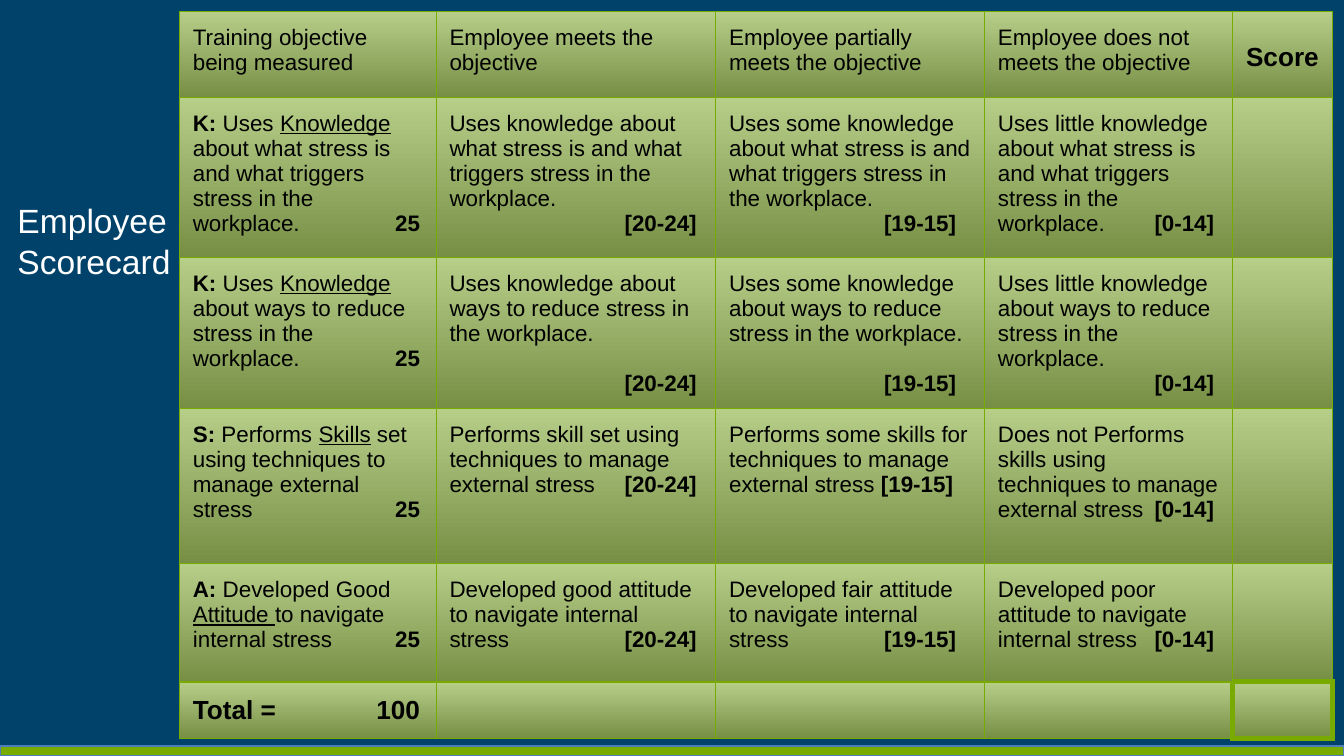
from dataclasses import dataclass

from lxml.etree import SubElement
from pptx import Presentation
from pptx.dml.color import RGBColor
from pptx.enum.shapes import MSO_SHAPE
from pptx.enum.text import MSO_ANCHOR, MSO_AUTO_SIZE, PP_ALIGN
from pptx.oxml import parse_xml
from pptx.oxml.ns import nsdecls, qn
from pptx.util import Inches, Pt


@dataclass(frozen=True)
class Theme:
    font: str = "Arial"
    background: str = "01426A"
    accent: str = "78AA00"
    bar_line: str = "4A7DBA"
    cell_top: str = "B7CE88"
    cell_bottom: str = "768F45"
    light: str = "FFFFFF"
    dark: str = "000000"
    title_size: float = 18
    body_size: float = 12
    strong_size: float = 14
    thin: float = 0.75
    thick: float = 3


BOLD, UNDERLINE = "bold", "underline"
COLUMNS = [19.1, 20.8, 20, 18.45, 7.45]
ROWS = [6.4, 11.9, 11.25, 11.55, 8.8, 4.2]
SCORE_STOPS = [16.9, 18.4, 16.9, 16.1, 5.5]
FULL, GOOD, FAIR, POOR = ((f"\t{score}", BOLD) for score in ("25", "[20-24]", "[19-15]", "[0-14]"))
STRESS = "about what stress is and what triggers stress in the workplace."
REDUCE = "about ways to reduce stress in the workplace."
HEADINGS = [
    "Training objective being measured",
    "Employee meets the objective",
    "Employee partially meets the objective",
    "Employee does not meets the objective",
]


def knowledge_row(topic):
    return [
        [[("K:", BOLD), " Uses ", ("Knowledge", UNDERLINE), f" {topic}", FULL]],
        [[f"Uses knowledge {topic}"], [GOOD]],
        [[f"Uses some knowledge {topic}"], [FAIR]],
    ]


SCORECARD = [
    [[[heading]] for heading in HEADINGS] + [[[("Score", BOLD)]]],
    knowledge_row(STRESS) + [[[f"Uses little knowledge {STRESS}", POOR]], []],
    knowledge_row(REDUCE) + [[[f"Uses little knowledge {REDUCE}"], [POOR]], []],
    [
        [[("S:", BOLD), " Performs ", ("Skills", UNDERLINE),
          " set using techniques to manage external stress", FULL]],
        [["Performs skill set using techniques to manage external stress", GOOD]],
        [["Performs some skills for techniques to manage external stress ", ("[19-15]", BOLD)]],
        [["Does not Performs skills using techniques to manage external stress", POOR]],
        [],
    ],
    [
        [[("A:", BOLD), " Developed Good ", ("Attitude ", UNDERLINE),
          "to navigate internal stress", FULL]],
        [["Developed good attitude to navigate internal stress", GOOD]],
        [["Developed fair attitude to navigate internal stress", FAIR]],
        [["Developed poor attitude to navigate internal stress", POOR]],
        [],
    ],
    [[[("Total =\t100", BOLD)]], [], [], [], []],
]
GAPS = {(2, 1): 13.4, (2, 2): 13.4}


class ScorecardSlide:
    def __init__(self, presentation, theme):
        self.theme = theme
        self.unit = presentation.slide_width / 100
        self.slide = presentation.slides.add_slide(presentation.slide_layouts[5])
        self.paint(self.slide.background.fill, theme.background)

    def grid(self, *lengths):
        return [round(length * self.unit) for length in lengths]

    def paint(self, fill, color):
        fill.solid()
        fill.fore_color.rgb = RGBColor.from_string(color)

    def run(self, paragraph, text, size, color, style=None):
        run = paragraph.add_run()
        run.text = text
        run.font.name = self.theme.font
        run.font.size = Pt(size)
        run.font.bold = style == BOLD
        run.font.underline = style == UNDERLINE
        run.font.color.rgb = RGBColor.from_string(color)

    def bar(self, *place):
        shape = self.slide.shapes.add_shape(MSO_SHAPE.RECTANGLE, *self.grid(*place))
        shape.shadow.inherit = False
        self.paint(shape.fill, self.theme.accent)
        shape.line.color.rgb = RGBColor.from_string(self.theme.bar_line)
        shape.line.width = Pt(self.theme.thin)

    def title(self, lines, *place):
        shape = self.slide.shapes.title
        shape.left, shape.top, shape.width, shape.height = self.grid(*place)
        frame = shape.text_frame
        frame.auto_size = MSO_AUTO_SIZE.NONE
        frame.vertical_anchor = MSO_ANCHOR.TOP
        for index, line in enumerate(lines):
            paragraph = frame.add_paragraph() if index else frame.paragraphs[0]
            paragraph.alignment = PP_ALIGN.LEFT
            self.run(paragraph, line, self.theme.title_size, self.theme.light)

    def table(self, content, left, top):
        place = self.grid(left, top, sum(COLUMNS), sum(ROWS))
        table = self.slide.shapes.add_table(len(ROWS), len(COLUMNS), *place).table
        table.first_row = table.horz_banding = False
        for column, width in zip(table.columns, self.grid(*COLUMNS)):
            column.width = width
        for row, height in zip(table.rows, self.grid(*ROWS)):
            row.height = height
        for row, cells in enumerate(content):
            for column, paragraphs in enumerate(cells):
                cell = table.cell(row, column)
                self.cell_style(cell, row, column)
                self.cell_text(cell, paragraphs, row, column)

    def cell_style(self, cell, row, column):
        theme = self.theme
        cell.margin_left = cell.margin_right = cell.margin_top = Inches(0.1)
        cell.margin_bottom = Inches(0.06)
        cell.fill.gradient()
        cell.fill.gradient_angle = 270
        for stop, position, color in zip(
            cell.fill.gradient_stops, (0, 1), (theme.cell_top, theme.cell_bottom)
        ):
            stop.position = position
            stop.color.rgb = RGBColor.from_string(color)
        last_row, last_column = len(ROWS) - 1, len(COLUMNS) - 1
        thick_sides = {
            (last_row, last_column): "LRTB",
            (last_row - 1, last_column): "B",
            (last_row, last_column - 1): "R",
        }.get((row, column), "")
        properties = cell._tc.get_or_add_tcPr()
        for index, side in enumerate("LRTB"):
            width = Pt(theme.thick if side in thick_sides else theme.thin)
            properties.insert(index, parse_xml(
                f'<a:ln{side} {nsdecls("a")} w="{width}"><a:solidFill>'
                f'<a:srgbClr val="{theme.accent}"/></a:solidFill></a:ln{side}>'
            ))

    def cell_text(self, cell, paragraphs, row, column):
        theme = self.theme
        score_heading = row == 0 and column == len(COLUMNS) - 1
        strong = score_heading or row == len(ROWS) - 1
        size = theme.strong_size if strong else theme.body_size
        if score_heading:
            cell.vertical_anchor = MSO_ANCHOR.MIDDLE
        if not paragraphs:
            ending = SubElement(cell.text_frame.paragraphs[0]._p, qn("a:endParaRPr"))
            ending.set("sz", str(int(size * 100)))
        for index, runs in enumerate(paragraphs):
            frame = cell.text_frame
            paragraph = frame.add_paragraph() if index else frame.paragraphs[0]
            properties = paragraph._p.get_or_add_pPr()
            stops = SubElement(properties, qn("a:tabLst"))
            position = self.grid(SCORE_STOPS[column])[0]
            SubElement(stops, qn("a:tab"), pos=str(position), algn="r")
            paragraph.alignment = PP_ALIGN.CENTER if score_heading else PP_ALIGN.LEFT
            if index and (row, column) in GAPS:
                paragraph.space_before = Pt(GAPS[row, column])
            for item in runs:
                text, style = (item, None) if isinstance(item, str) else item
                self.run(paragraph, text, size, theme.dark, style)


def main():
    presentation = Presentation()
    presentation.slide_width = Inches(10)
    presentation.slide_height = presentation.slide_width * 9 // 16
    scorecard = ScorecardSlide(presentation, Theme())
    scorecard.bar(0, 55.5, 100, 0.7)
    scorecard.title(["Employee", "Scorecard"], 0.3, 14.4, 78.9, 6.5)
    scorecard.table(SCORECARD, 13.35, 0.85)
    presentation.save("out.pptx")


if __name__ == "__main__":
    main()
